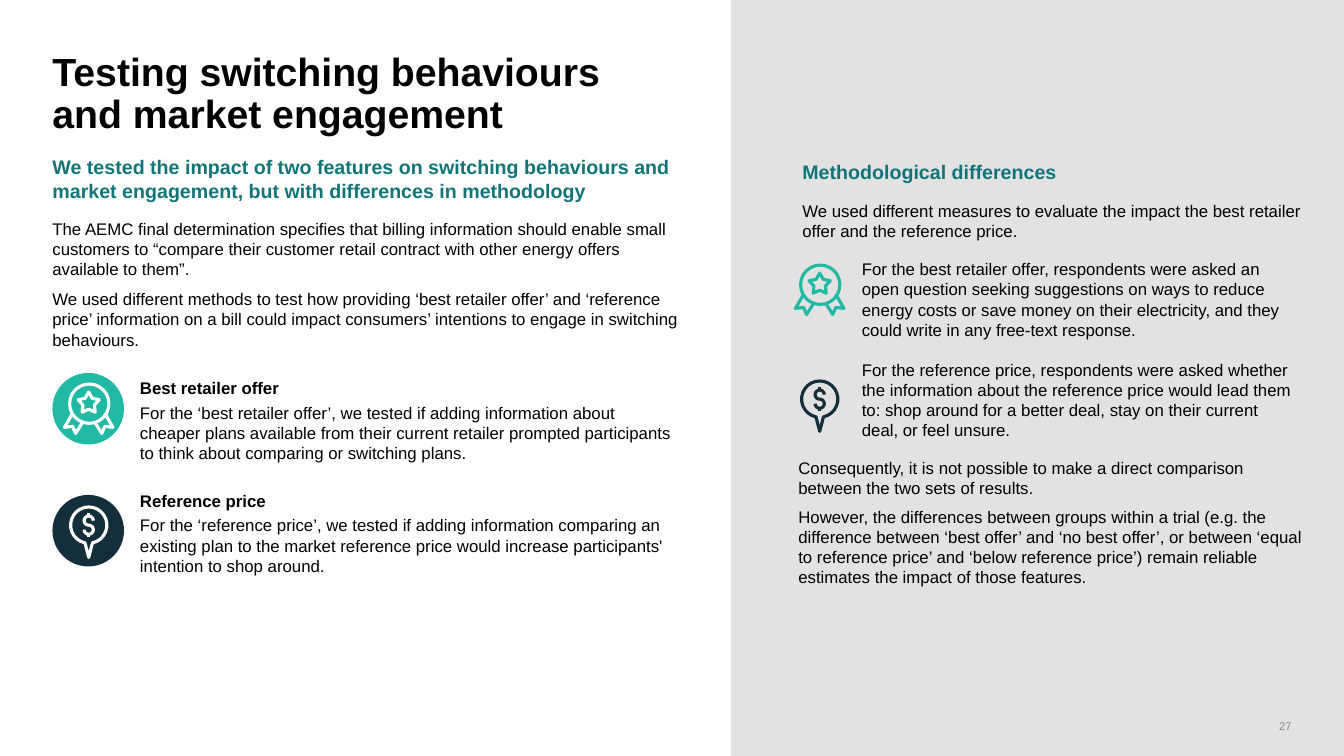
import math
from lxml import etree
from pptx import Presentation
from pptx.dml.color import RGBColor
from pptx.enum.shapes import MSO_CONNECTOR, MSO_SHAPE
from pptx.enum.text import MSO_ANCHOR, PP_ALIGN
from pptx.oxml.ns import qn
from pptx.util import Inches, Pt

LINE = MSO_CONNECTOR.STRAIGHT
OVAL, RECT = MSO_SHAPE.OVAL, MSO_SHAPE.RECTANGLE
TOP, BASE = MSO_ANCHOR.TOP, MSO_ANCHOR.BOTTOM
LEFT, RIGHT = PP_ALIGN.LEFT, PP_ALIGN.RIGHT
FONT = "Arial"
INKS = {"black": "000000", "white": "FFFFFF", "panel": "E2E2E3", "grey": "8C8C8C",
        "head": "117479", "teal": "20B9A3", "navy": "142E3B"}


def ink(name):
    return RGBColor.from_string(INKS[name])


def paint(shape, fill=None, line=None):
    shape.shadow.inherit = False
    if fill:
        shape.fill.solid()
        shape.fill.fore_color.rgb = ink(fill)
    else:
        shape.fill.background()
    if line:
        shape.line.color.rgb = ink(line)
        shape.line.width = Pt(2.25)
    else:
        shape.line.fill.background()


def add_form(parent, kind, box, fill=None, line=None):
    shape = parent.shapes.add_shape(kind, *map(Inches, box))
    paint(shape, fill, line)


def add_path(group, mid, points, line, closed=False):
    spots = [(Inches(mid[0] + x), Inches(mid[1] + y)) for x, y in points]
    form = group.shapes.build_freeform(*spots[0])
    form.add_line_segments(spots[1:], close=closed)
    paint(form.convert_to_shape(), None, line)


def add_bar(group, x, top, end, line):
    bar = group.shapes.add_connector(LINE, *map(Inches, (x, top, x, end)))
    bar.line.color.rgb = ink(line)
    bar.line.width = Pt(2.25)
    etree.SubElement(bar.element.spPr, qn("a:effectLst"))


def arc(y, size, start, end, steps=24):
    turns = [math.radians(start + (end - start) * i / steps) for i in range(steps + 1)]
    return [(size * math.cos(t), y + size * math.sin(t)) for t in turns]


def add_disc(group, mid, fill):
    x, y = mid
    add_form(group, OVAL, (x - 0.36, y - 0.3, 0.71, 0.71), fill)


def draw_badge(slide, mid, line, disc=None):
    group = slide.shapes.add_group_shape()
    if disc:
        add_disc(group, mid, disc)
    tail = [(0.16, 0.1), (0.24, 0.24), (0.16, 0.23), (0.13, 0.3), (0.06, 0.19)]
    for side in (-1, 1):
        add_path(group, mid, [(side * x, y) for x, y in tail], line)
    add_form(group, OVAL, (mid[0] - 0.19, mid[1] - 0.19, 0.39, 0.39), None, line)
    star = []
    for i in range(10):
        size, turn = (0.06 if i % 2 else 0.11), math.radians(36 * i - 90)
        star.append((size * math.cos(turn), size * math.sin(turn)))
    add_path(group, mid, star, line, True)


def draw_pin(slide, mid, line, disc=None):
    group = slide.shapes.add_group_shape()
    if disc:
        add_disc(group, mid, disc)
    x, y = mid
    add_path(group, mid, arc(0, 0.18, 78, -258) + [(0, 0.32)], line, True)
    curl = arc(0.045, 0.045, 180, -90) + arc(-0.045, 0.045, 90, 360)
    add_path(group, mid, curl, line)
    for top in (-0.12, 0.09):
        add_bar(group, x, y + top, y + top + 0.03, line)


def fill_text(shape, paras, size=12, tint="black", bold=False, inset=True,
              anchor=TOP, align=LEFT, gap=0, after=0, pitch=None):
    frame = shape.text_frame
    frame.word_wrap = True
    frame.vertical_anchor = anchor
    if not inset:
        frame.margin_left = frame.margin_right = 0
        frame.margin_top = frame.margin_bottom = 0
    for i, text in enumerate(paras):
        para = frame.paragraphs[0] if i == 0 else frame.add_paragraph()
        para.alignment = align
        para.space_before = Pt(gap if i else 0)
        para.space_after = Pt(after)
        if pitch:
            para.line_spacing = pitch
        run = para.add_run()
        run.text = text
        run.font.name = FONT
        run.font.size = Pt(size)
        run.font.bold = bold
        run.font.color.rgb = ink(tint)
    return frame


def add_text(slide, box, paras, **style):
    shape = slide.shapes.add_textbox(*map(Inches, box))
    return fill_text(shape, paras, **style)


def set_title(slide, box, text):
    title = slide.shapes.title
    title.left, title.top, title.width, title.height = map(Inches, box)
    fill_text(title, [text], size=28, bold=True, inset=False, pitch=0.9)


def add_left(slide):
    add_text(slide, (0.52, 1.54, 6.3, 0.47), [
        "We tested the impact of two features on switching behaviours and market engagement, but with differences in methodology",
    ], size=14, tint="head", bold=True, inset=False)
    add_text(slide, (0.52, 2.17, 6.3, 1.39), [
        "The AEMC final determination specifies that billing information should enable small customers to “compare their customer retail contract with other energy offers available to them”.",
        "We used different methods to test how providing ‘best retailer offer’ and ‘reference price’ information on a bill could impact consumers’ intentions to engage in switching behaviours.",
    ], inset=False, gap=7)
    tests = add_text(slide, (1.29, 3.7, 5.53, 2.09), [
        "Best retailer offer",
        "For the ‘best retailer offer’, we tested if adding information about cheaper plans available from their current retailer prompted participants to think about comparing or switching plans.",
        "Reference price",
        "For the ‘reference price’, we tested if adding information comparing an existing plan to the market reference price would increase participants' intention to shop around.",
    ], after=3)
    for para in tests.paragraphs[::2]:
        para.runs[0].font.bold = True
    tests.paragraphs[2].space_before = Pt(17)
    draw_badge(slide, (0.88, 4), "white", "teal")
    draw_pin(slide, (0.88, 5.21), "white", "navy")


def add_right(slide):
    add_form(slide, RECT, (7.25, 0, 6.08, 7.5), "panel")
    add_text(slide, (7.86, 1.54, 5.06, 0.34), ["Methodological differences"],
             size=14, tint="head", bold=True)
    add_text(slide, (7.86, 1.94, 5.23, 0.5), [
        "We used different measures to evaluate the impact the best retailer offer and the reference price.",
    ])
    add_text(slide, (8.45, 2.52, 4.46, 2.12), [
        "For the best retailer offer, respondents were asked an open question seeking suggestions on ways to reduce energy costs or save money on their electricity, and they could write in any free-text response.",
        "For the reference price, respondents were asked whether the information about the reference price would lead them to: shop around for a better deal, stay on their current deal, or feel unsure.",
    ], gap=14)
    add_text(slide, (7.82, 4.49, 5.23, 1.4), [
        "Consequently, it is not possible to make a direct comparison between the two sets of results.",
        "However, the differences between groups within a trial (e.g. the difference between ‘best offer’ and ‘no best offer’, or between ‘equal to reference price’ and ‘below reference price’) remain reliable estimates the impact of those features.",
    ], gap=6)
    draw_badge(slide, (8.13, 2.82), "teal")
    draw_pin(slide, (8.13, 3.96), "navy")
    add_text(slide, (12.36, 7.14, 0.45, 0.13), ["27"], size=8, tint="grey",
             inset=False, anchor=BASE, align=RIGHT)


def main():
    deck = Presentation()
    deck.slide_width, deck.slide_height = Inches(13.33), Inches(7.5)
    slide = deck.slides.add_slide(deck.slide_layouts[5])
    set_title(slide, (0.52, 0.52, 6.1, 0.85), "Testing switching behaviours and market engagement")
    add_left(slide)
    add_right(slide)
    deck.save("out.pptx")


if __name__ == "__main__":
    main()
